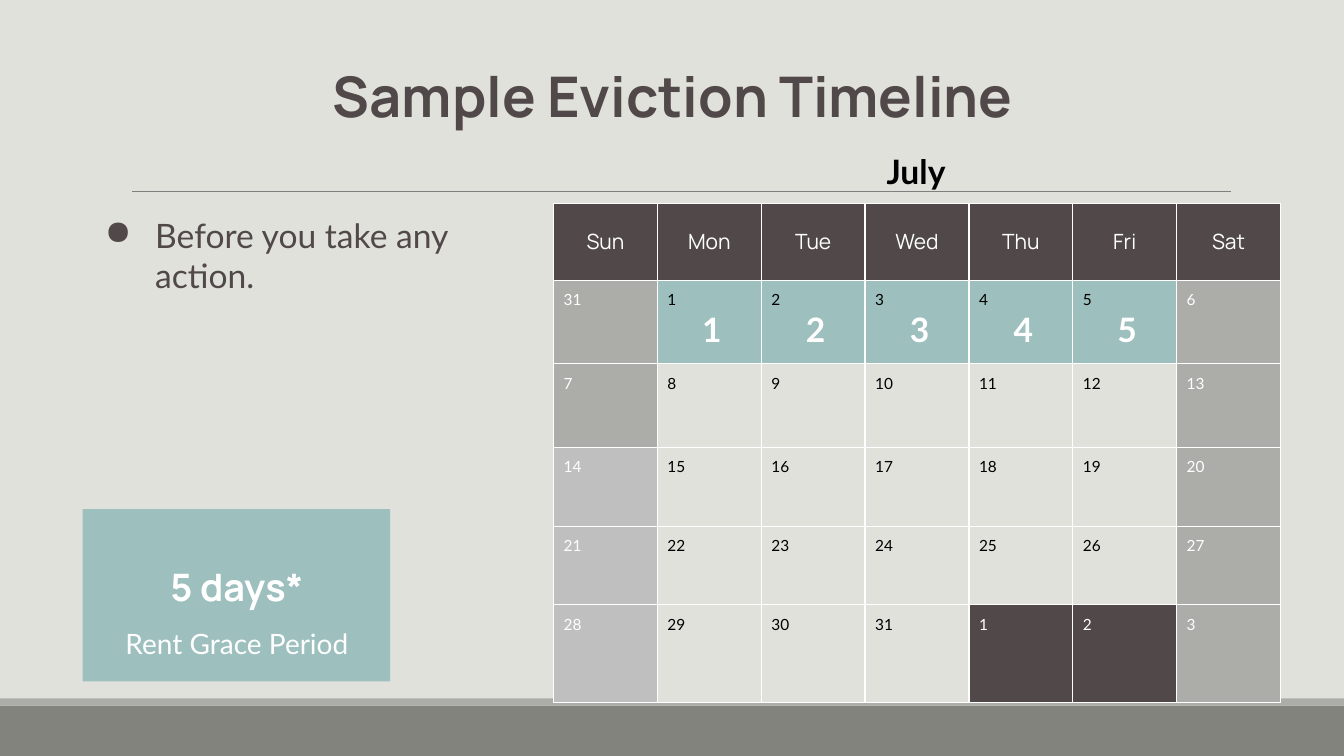
from dataclasses import dataclass

import pptx
import pptx.dml.color
import pptx.enum.shapes
import pptx.enum.text
import pptx.oxml
import pptx.oxml.ns
import pptx.util
from pptx.util import Inches

COLORS = {
    "background": "E1E1DB",
    "footer": "82837C",
    "muted": "ACADA8",
    "sunday": "BFBFBF",
    "rule": "7F7F7F",
    "dark": "514949",
    "grace": "9DBFBE",
    "white": "FFFFFF",
    "black": "000000",
}
WEEKDAYS = ["Sun", "Mon", "Tue", "Wed", "Thu", "Fri", "Sat"]
DATES = [31, *range(1, 32), 1, 2, 3]
ROW_HEIGHTS = [0.76, 0.83, 0.83, 0.78, 0.78, 0.97]
COLUMN_WIDTH = 1.03
GRACE_DAYS = 5
CENTER = pptx.enum.text.PP_ALIGN.CENTER
LEFT = pptx.enum.text.PP_ALIGN.LEFT
SLIM_MARGINS = (0.05, 0.03, 0.05, 0.03)


@dataclass
class Box:
    left: float
    top: float
    width: float
    height: float
    color: str = ""

    def lengths(self):
        return [Inches(n) for n in (self.left, self.top, self.width, self.height)]


FOOTER_BAND = Box(0, 7, 13.33, 0.5, "footer")
FOOTER_EDGE = Box(0, 6.93, 13.33, 0.07, "muted")
GRACE_PANEL = Box(0.82, 5.05, 3.05, 1.71, "grace")


def rgb(name: str):
    return pptx.dml.color.RGBColor.from_string(COLORS[name])


def add_rectangle(slide, box: Box) -> None:
    shape = slide.shapes.add_shape(
        pptx.enum.shapes.MSO_SHAPE.RECTANGLE, *box.lengths())
    shape.shadow.inherit = False
    shape.fill.solid()
    shape.fill.fore_color.rgb = rgb(box.color)
    shape.line.fill.background()


def add_text(frame, text: str, *, size: float, color: str, font: str = "Lato",
             bold: bool = False, align=LEFT, spacing: float = 1.0):
    """Write a paragraph, using the frame's first one while it is empty."""
    paragraph = frame.paragraphs[0]
    if paragraph.runs:
        paragraph = frame.add_paragraph()
    paragraph.alignment = align
    paragraph.line_spacing = spacing
    run = paragraph.add_run()
    run.text = text
    run.font.size = pptx.util.Pt(size)
    run.font.name = font
    run.font.bold = bold
    run.font.color.rgb = rgb(color)
    return paragraph


def set_margins(target, margins) -> None:
    (target.margin_left, target.margin_top,
     target.margin_right, target.margin_bottom) = map(Inches, margins)


def add_text_box(slide, box: Box, margins=SLIM_MARGINS, grow: bool = False):
    frame = slide.shapes.add_textbox(*box.lengths()).text_frame
    frame.word_wrap = True
    set_margins(frame, margins)
    if grow:
        frame.auto_size = pptx.enum.text.MSO_AUTO_SIZE.SHAPE_TO_FIT_TEXT
    return frame


def add_bullet(paragraph, color: str) -> None:
    properties = paragraph._p.get_or_add_pPr()
    properties.set("marL", str(Inches(0.67)))
    properties.set("indent", str(Inches(-0.5)))
    namespace = pptx.oxml.ns.nsdecls("a")
    for xml in (
        f'<a:buClr {namespace}><a:srgbClr val="{COLORS[color]}"/></a:buClr>',
        f'<a:buChar {namespace} char="●"/>',
    ):
        properties.append(pptx.oxml.parse_xml(xml))


def style_cell(cell, fill: str, margins) -> None:
    cell.fill.solid()
    cell.fill.fore_color.rgb = rgb(fill)
    set_margins(cell, margins)
    properties = cell._tc.get_or_add_tcPr()
    for index, side in enumerate(("lnL", "lnR", "lnT", "lnB")):
        properties.insert(index, pptx.oxml.parse_xml(
            f'<a:{side} {pptx.oxml.ns.nsdecls("a")} w="12700"><a:solidFill>'
            f'<a:srgbClr val="{COLORS["white"]}"/></a:solidFill></a:{side}>'))


def date_fill(position: int, week: int, weekday: int) -> str:
    if weekday == 0:
        return "muted" if week < 2 else "sunday"
    if weekday == 6:
        return "muted"
    if position <= GRACE_DAYS:
        return "grace"
    return "dark" if position > 31 else "background"


def add_calendar(slide) -> None:
    box = Box(5.49, 2.02, COLUMN_WIDTH * len(WEEKDAYS), sum(ROW_HEIGHTS))
    table = slide.shapes.add_table(
        len(ROW_HEIGHTS), len(WEEKDAYS), *box.lengths()).table
    table.horz_banding = False
    table.first_row = False
    for column in table.columns:
        column.width = Inches(COLUMN_WIDTH)
    for row, height in zip(table.rows, ROW_HEIGHTS):
        row.height = Inches(height)

    for column, name in enumerate(WEEKDAYS):
        cell = table.cell(0, column)
        style_cell(cell, "dark", (0.07, 0.03, 0.07, 0.03))
        cell.vertical_anchor = pptx.enum.text.MSO_ANCHOR.MIDDLE
        add_text(cell.text_frame, name, size=15, font="Manrope",
                 color="white", align=CENTER)

    for position, date in enumerate(DATES):
        week, weekday = divmod(position, len(WEEKDAYS))
        cell = table.cell(week + 1, weekday)
        fill = date_fill(position, week, weekday)
        style_cell(cell, fill, (0.1, 0.1, 0.05, 0.03))
        color = "black" if fill in ("grace", "background") else "white"
        add_text(cell.text_frame, str(date), size=11, color=color)
        if fill == "grace":
            add_text(cell.text_frame, str(date), size=24, color="white",
                     bold=True, align=CENTER)


def add_rule(slide) -> None:
    line = slide.shapes.add_connector(
        pptx.enum.shapes.MSO_CONNECTOR.STRAIGHT,
        Inches(1.31), Inches(1.9), Inches(12.21), Inches(1.9))
    line.line.color.rgb = rgb("rule")
    line.line.width = pptx.util.Pt(0.75)
    line._element.spPr.append(pptx.oxml.parse_xml(
        f'<a:effectLst {pptx.oxml.ns.nsdecls("a")}/>'))


def main() -> None:
    presentation = pptx.Presentation()
    presentation.slide_width = Inches(13.33)
    presentation.slide_height = Inches(7.5)
    slide = presentation.slides.add_slide(presentation.slide_layouts[6])
    slide.background.fill.solid()
    slide.background.fill.fore_color.rgb = rgb("background")

    # Footer and title
    for band in (FOOTER_BAND, FOOTER_EDGE):
        add_rectangle(slide, band)
    add_rule(slide)
    title = add_text_box(slide, Box(1.55, 0.58, 10.24, 0.72), grow=True)
    add_text(title, "Sample Eviction Timeline", size=40, font="Manrope",
             color="dark", bold=True, align=CENTER)

    # Calendar
    add_calendar(slide)

    # Grace period panel and advice
    add_rectangle(slide, GRACE_PANEL)
    advice = add_text_box(slide, Box(0.82, 2.1, 3.8, 2.95))
    add_bullet(add_text(advice, "Before you take any action.", size=24,
                        color="dark"), "dark")
    grace = add_text_box(slide, Box(1.08, 5.34, 2.54, 1.13))
    add_text(grace, "5 days*", size=27, font="Manrope", color="white",
             bold=True, align=CENTER, spacing=1.5)
    add_text(grace, "Rent Grace Period", size=20, color="white",
             align=CENTER, spacing=1.5)

    # Month name
    month = add_text_box(slide, Box(7.56, 1.37, 3.05, 0.67), (0.13,) * 4, grow=True)
    add_text(month, "July", size=24, color="black", bold=True, align=CENTER)

    presentation.save("out.pptx")


if __name__ == "__main__":
    main()
